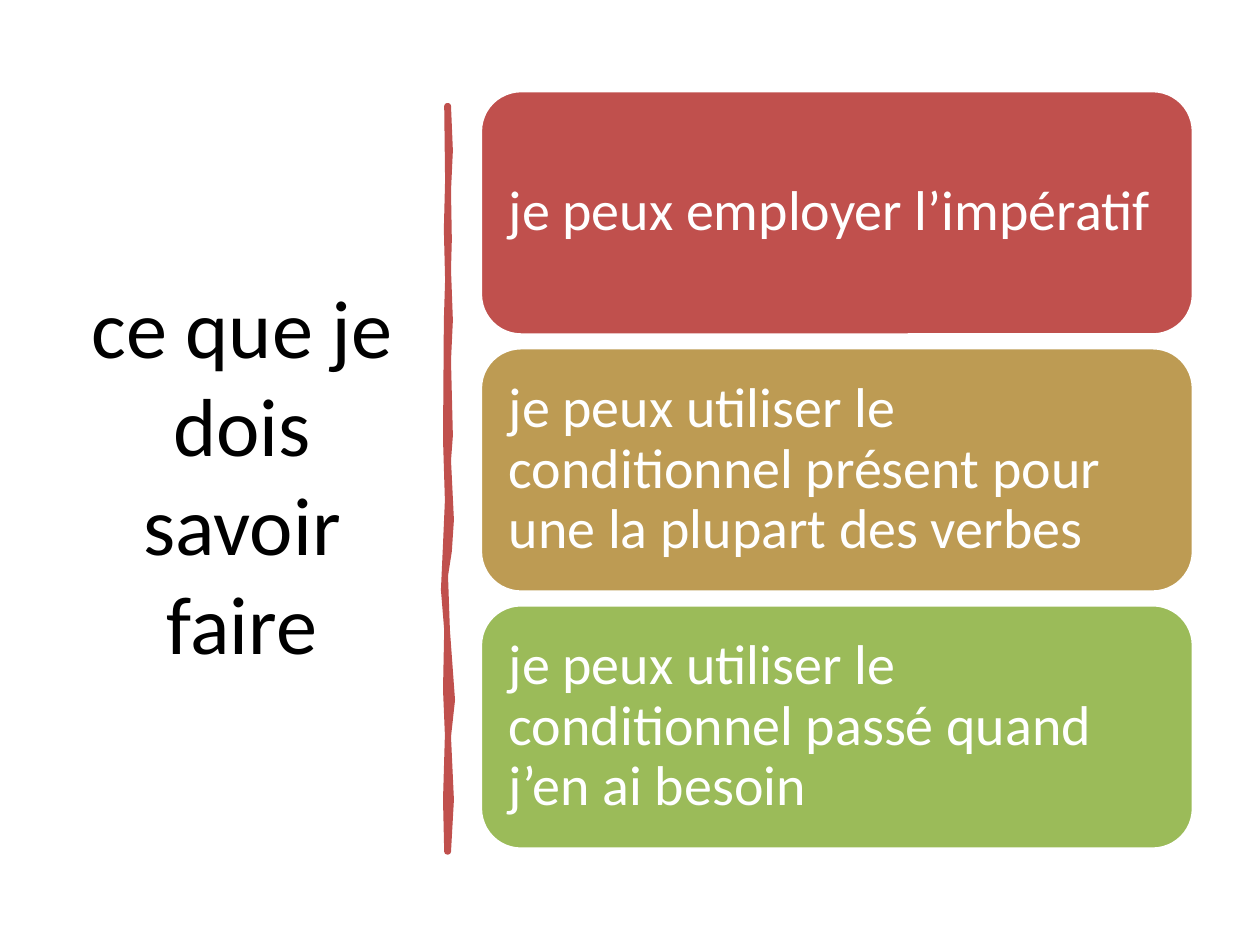
"""Build a slide of French grammar goals beside a hand-drawn divider."""
import pptx
import pptx.dml.color
import pptx.enum.shapes
import pptx.enum.text
import pptx.util

Pt = pptx.util.Pt
ALIGN = pptx.enum.text.PP_ALIGN


def rgb(value):
    return pptx.dml.color.RGBColor.from_string(value)


def write(tf, text, size, color, align, spacing=1.0, after=0, inset=7.2):
    tf.word_wrap = True
    tf.auto_size = pptx.enum.text.MSO_AUTO_SIZE.NONE
    tf.vertical_anchor = pptx.enum.text.MSO_ANCHOR.MIDDLE
    tf.margin_left = tf.margin_right = Pt(inset)
    tf.margin_top = tf.margin_bottom = Pt(inset / 2)
    p = tf.paragraphs[0]
    p.alignment = align
    p.line_spacing = spacing
    p.space_after = Pt(after)
    r = p.add_run()
    r.text = text
    r.font.name = "Calibri"
    r.font.size = Pt(size)
    r.font.color.rgb = rgb(color)


prs = pptx.Presentation()
prs.slide_width, prs.slide_height = Pt(720), Pt(540)
s = prs.slides.add_slide(prs.slide_layouts[5])

title = s.shapes.title
title.left, title.top, title.width, title.height = Pt(37.5), Pt(50.4), Pt(201.6), Pt(440)
write(title.text_frame, "ce que je dois savoir faire", 47, "000000", ALIGN.CENTER)

right_edge = [
    (256.1, 60.5), (257.2, 86), (256.1, 109), (256.6, 137), (256.1, 154),
    (257.2, 183), (256.1, 206), (257.2, 249), (256.1, 263), (257.8, 297),
    (256.6, 315), (254.4, 329), (255.5, 360), (258.4, 400), (256.1, 421),
    (257.8, 457), (256.1, 486.7),
]
left_edge = [
    (255.5, 486.7), (254.8, 457), (255.9, 420), (254.8, 394), (255.5, 360),
    (253.6, 337), (254.8, 311), (255.9, 286), (254.8, 251), (255.3, 183),
    (256, 160), (255.3, 131), (256, 103), (255.5, 60.5),
]
outline = [(Pt(x), Pt(y)) for x, y in right_edge + left_edge]
fb = s.shapes.build_freeform(*outline[0])
fb.add_line_segments(outline[1:], close=True)
divider = fb.convert_to_shape()
divider.shadow.inherit = False
divider.fill.solid()
divider.fill.fore_color.rgb = rgb("C0504D")
divider.line.color.rgb = rgb("C0504D")
divider.line.width = Pt(3.25)

goals = [
    ("je peux employer l’impératif", "C0504D"),
    ("je peux utiliser le conditionnel présent pour une la plupart des verbes", "BD9B53"),
    ("je peux utiliser le conditionnel passé quand j’en ai besoin", "9BBB59"),
]
for i, (text, color) in enumerate(goals):
    sp = s.shapes.add_shape(
        pptx.enum.shapes.MSO_SHAPE.ROUNDED_RECTANGLE,
        Pt(274.5), Pt(51.8 + 146.9 * i), Pt(407.5), Pt(139.7))
    sp.shadow.inherit = False
    sp.fill.solid()
    sp.fill.fore_color.rgb = rgb(color)
    sp.line.color.rgb = rgb("FFFFFF")
    sp.line.width = Pt(2)
    write(sp.text_frame, text, 32, "FFFFFF", ALIGN.LEFT, spacing=0.9, after=11.2, inset=9.4)

prs.save("out.pptx")
